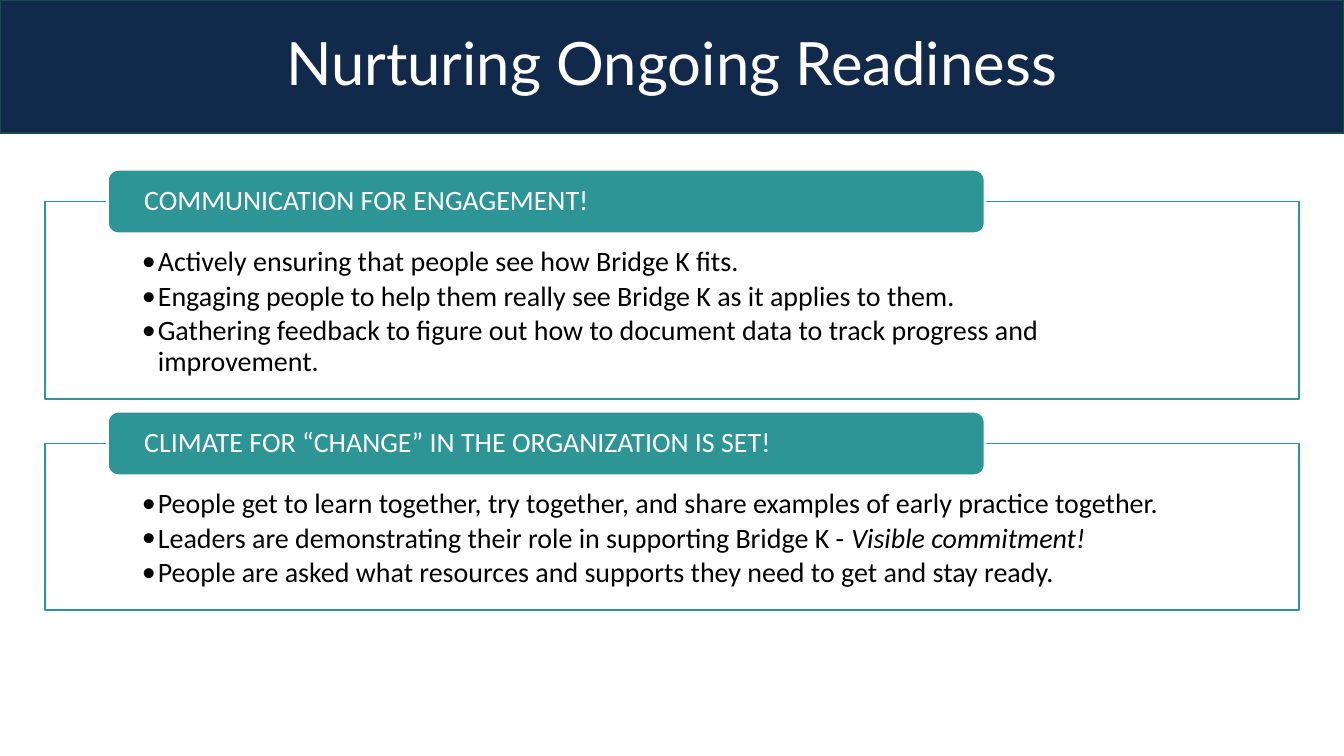
from lxml.etree import SubElement
from pptx import Presentation
from pptx.dml.color import RGBColor
from pptx.enum.shapes import MSO_SHAPE as Shape
from pptx.enum.text import MSO_ANCHOR as Anchor, PP_ALIGN as Align
from pptx.oxml.ns import qn
from pptx.util import Inches, Pt

NAVY, DARK_TEAL, TEAL = "11294B", "174A4B", "2D9596"
WHITE, BLACK = "FFFFFF", "000000"
SLIDE_WIDTH, BODY_WIDTH = 10, 9.33


def color(value):
    return RGBColor.from_string(value)


class SlideBuilder:
    def __init__(self, slide, font="Calibri", size=15):
        self.slide = slide
        self.font = font
        self.size = size

    def panel(self, kind, left, top, width, height, fill, line, weight=1):
        panel = self.slide.shapes.add_shape(
            kind, Inches(left), Inches(top), Inches(width), Inches(height))
        panel.shadow.inherit = False
        panel.fill.solid()
        panel.fill.fore_color.rgb = color(fill)
        panel.line.color.rgb = color(line)
        panel.line.width = Pt(weight)
        return panel

    def frame(self, panel, anchor, left=0.1, top=0.05, right=0.1, bottom=0.05):
        frame = panel.text_frame
        frame.word_wrap = True
        frame.vertical_anchor = anchor
        frame.margin_left, frame.margin_right = Inches(left), Inches(right)
        frame.margin_top, frame.margin_bottom = Inches(top), Inches(bottom)
        return frame

    def style(self, paragraph, ink, align=Align.LEFT, font=None, size=None):
        paragraph.alignment = align
        paragraph.line_spacing = 0.9
        for run in paragraph.runs:
            run.font.name = font or self.font
            run.font.size = Pt(size or self.size)
            run.font.color.rgb = color(ink)

    def banner(self, title):
        banner = self.panel(
            Shape.ROUNDED_RECTANGLE, 0, 0, SLIDE_WIDTH, 0.99, NAVY, DARK_TEAL)
        banner.adjustments[0] = 0
        frame = self.frame(banner, Anchor.MIDDLE)
        frame.text = title
        self.style(frame.paragraphs[0], WHITE, Align.CENTER, "Lato", 32)

    def heading(self, top, title):
        heading = self.panel(
            Shape.ROUNDED_RECTANGLE, 0.8, top, 6.53, 0.48, TEAL, WHITE, 1.5)
        frame = self.frame(heading, Anchor.MIDDLE, 0.25, 0, 0.25, 0)
        frame.text = title
        self.style(frame.paragraphs[0], WHITE)

    def bullet(self, paragraph, text, emphasis):
        paragraph.text = text
        paragraph.level = 1
        paragraph.space_after = Pt(2.4)
        if emphasis:
            stressed = paragraph.add_run()
            stressed.text = emphasis
            stressed.font.italic = True
        self.style(paragraph, BLACK)
        properties = paragraph._p.get_or_add_pPr()
        properties.set("marL", str(Inches(0.12)))
        properties.set("indent", str(Inches(-0.12)))
        SubElement(properties, qn("a:buFont")).set("typeface", self.font)
        SubElement(properties, qn("a:buChar")).set("char", "•")
        paragraph.font.size = Pt(self.size)

    def section(self, top, height, title, points):
        left = (SLIDE_WIDTH - BODY_WIDTH) / 2
        body = self.panel(
            Shape.RECTANGLE, left, top, BODY_WIDTH, height, WHITE, TEAL)
        fill_color = body.fill._xPr.find(qn("a:solidFill"))[0]
        SubElement(fill_color, qn("a:alpha")).set("val", "90000")
        frame = self.frame(body, Anchor.TOP, 0.72, 0.34, 0.72, 0.12)
        for index, (text, emphasis) in enumerate(points):
            paragraph = frame.add_paragraph() if index else frame.paragraphs[0]
            self.bullet(paragraph, text, emphasis)
        self.heading(top - 0.24, title)


SECTIONS = [
    (1.5, 1.47, "COMMUNICATION FOR ENGAGEMENT!", [
        ("Actively ensuring that people see how Bridge K fits.", ""),
        ("Engaging people to help them really see Bridge K as it applies to them.", ""),
        ("Gathering feedback to figure out how to document data to track "
         "progress and improvement.", ""),
    ]),
    (3.3, 1.24, "CLIMATE FOR “CHANGE” IN THE ORGANIZATION IS SET!", [
        ("People get to learn together, try together, and share examples of "
         "early practice together.", ""),
        ("Leaders are demonstrating their role in supporting Bridge K - ",
         "Visible commitment!"),
        ("People are asked what resources and supports they need to get and "
         "stay ready.", ""),
    ]),
]


def main():
    deck = Presentation()
    deck.slide_width = Inches(SLIDE_WIDTH)
    deck.slide_height = deck.slide_width * 9 // 16
    builder = SlideBuilder(deck.slides.add_slide(deck.slide_layouts[6]))
    builder.banner("Nurturing Ongoing Readiness")
    for section in SECTIONS:
        builder.section(*section)
    deck.save("out.pptx")


if __name__ == "__main__":
    main()
